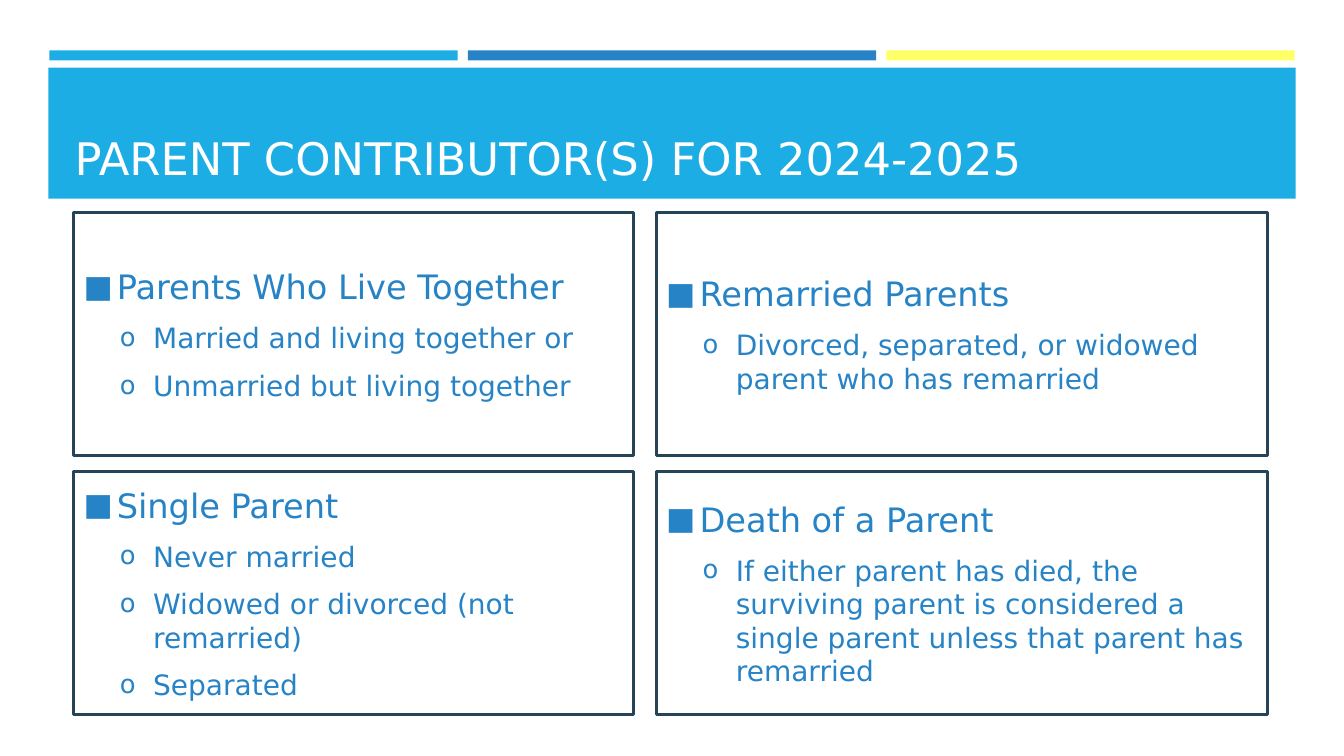
from dataclasses import dataclass

from lxml import etree
from pptx import Presentation
from pptx import util as u
from pptx.dml.color import RGBColor
from pptx.enum import shapes, text
from pptx.oxml.ns import qn


@dataclass(frozen=True)
class Theme:
    """Colours, font and type sizes of the slide."""
    font: str = "DejaVu Sans"
    sky: str = "1CADE4"
    blue: str = "2683C6"
    yellow: str = "FFFF66"
    navy: str = "264457"
    white: str = "FFFFFF"
    title_size: int = 32
    heading_size: int = 24
    detail_size: int = 20
    border: float = 2.25


THEME = Theme()
COLUMNS = ((0.73, 5.55), (6.51, 6.06))
ROW_TOP, ROW_STEP, ROW_HEIGHT = 2.11, 2.57, 2.41
STRIPE_LEFT, STRIPE_STEP, STRIPE_WIDTH = 0.49, 4.15, 4.05
SITUATIONS = (
    ("Parents Who Live Together",
     "Married and living together or",
     "Unmarried but living together"),
    ("Remarried Parents",
     "Divorced, separated, or widowed parent who has remarried"),
    ("Single Parent",
     "Never married",
     "Widowed or divorced (not remarried)",
     "Separated"),
    ("Death of a Parent",
     "If either parent has died, the surviving parent is considered a "
     "single parent unless that parent has remarried"),
)


def add_rectangle(slide, left, top, width, height, fill=None, line=None):
    """Draw a plain rectangle with an optional fill and border."""
    rectangle = slide.shapes.add_shape(
        shapes.MSO_SHAPE.RECTANGLE,
        *(u.Inches(length) for length in (left, top, width, height)))
    rectangle.shadow.inherit = False
    if fill:
        rectangle.fill.solid()
        rectangle.fill.fore_color.rgb = RGBColor.from_string(fill)
    else:
        rectangle.fill.background()
    if line:
        rectangle.line.color.rgb = RGBColor.from_string(line)
        rectangle.line.width = u.Pt(THEME.border)
    else:
        rectangle.line.fill.background()
    return rectangle


def style_font(font, size, color):
    """Apply the theme typeface with a size and colour."""
    font.name = THEME.font
    font.size = u.Pt(size)
    font.color.rgb = RGBColor.from_string(color)


def add_bullet(paragraph, symbol, indent):
    """Give a paragraph a coloured bullet and a hanging indent."""
    properties = paragraph._p.get_or_add_pPr()
    properties.set("marL", str(u.Inches(indent)))
    properties.set("indent", str(u.Inches(-0.33)))
    color = etree.SubElement(properties, qn("a:buClr"))
    etree.SubElement(color, qn("a:srgbClr"), val=THEME.blue)
    etree.SubElement(properties, qn("a:buSzPct"), val="92000")
    etree.SubElement(properties, qn("a:buFont"), typeface=THEME.font)
    etree.SubElement(properties, qn("a:buChar"), char=symbol)


def add_situation(slide, column, row, lines):
    """Draw one bordered cell with a heading and its details."""
    left, width = COLUMNS[column]
    cell = add_rectangle(slide, left, ROW_TOP + row * ROW_STEP, width,
                         ROW_HEIGHT, line=THEME.navy)
    frame = cell.text_frame
    frame.word_wrap = True
    frame.vertical_anchor = text.MSO_ANCHOR.MIDDLE
    frame.text = "\n".join(lines)
    for position, paragraph in enumerate(frame.paragraphs):
        is_detail = position > 0
        size = THEME.detail_size if is_detail else THEME.heading_size
        paragraph.alignment = text.PP_ALIGN.LEFT
        paragraph.level = int(is_detail)
        paragraph.space_before = u.Pt(0.2 * size if is_detail else 0)
        paragraph.space_after = u.Pt(6)
        if is_detail:
            add_bullet(paragraph, "o", 0.69)
        else:
            add_bullet(paragraph, "■", 0.33)
        style_font(paragraph.runs[0].font, size, THEME.blue)


def add_banner(slide, wording):
    """Draw the three stripes and the title on its band."""
    for index, color in enumerate((THEME.sky, THEME.blue, THEME.yellow)):
        add_rectangle(slide, STRIPE_LEFT + index * STRIPE_STEP, 0.5,
                      STRIPE_WIDTH, 0.1, fill=color)
    add_rectangle(slide, 0.48, 0.67, 12.37, 1.3, fill=THEME.sky)
    title = slide.shapes.title
    title.element.getparent().append(title.element)
    title.left, title.top = u.Inches(0.64), u.Inches(0.77)
    title.width, title.height = u.Inches(12.06), u.Inches(1.11)
    title.text_frame.text = wording
    title.text_frame.vertical_anchor = text.MSO_ANCHOR.BOTTOM
    heading = title.text_frame.paragraphs[0]
    heading.alignment = text.PP_ALIGN.LEFT
    style_font(heading.runs[0].font, THEME.title_size, THEME.white)


def main():
    """Build the slide and save it."""
    presentation = Presentation()
    presentation.slide_width = u.Inches(13.33)
    presentation.slide_height = u.Inches(7.5)
    slide = presentation.slides.add_slide(presentation.slide_layouts[5])
    add_banner(slide, "PARENT CONTRIBUTOR(S) FOR 2024-2025")
    for index, lines in enumerate(SITUATIONS):
        row, column = divmod(index, len(COLUMNS))
        add_situation(slide, column, row, lines)
    presentation.save("out.pptx")


if __name__ == "__main__":
    main()
